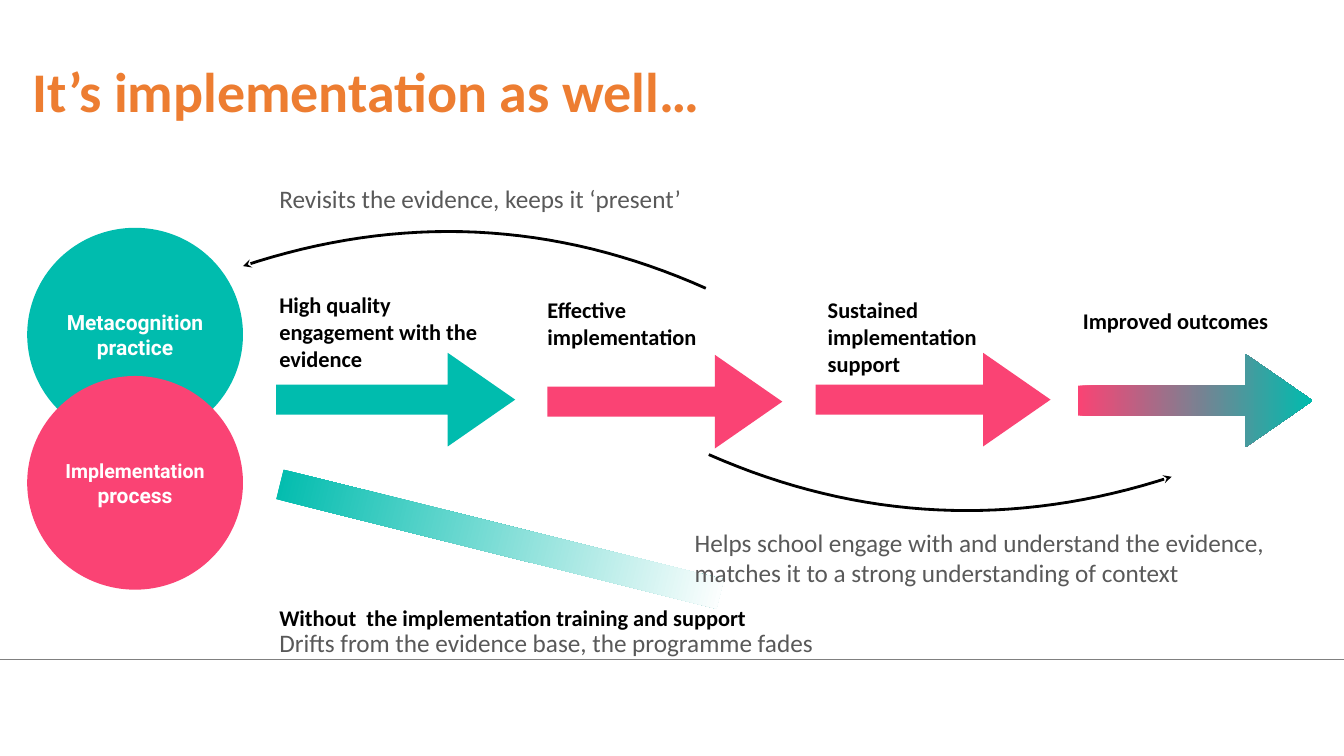
from lxml.etree import SubElement
from pptx import Presentation
from pptx.dml.color import RGBColor
from pptx.enum.shapes import MSO_CONNECTOR, MSO_SHAPE
from pptx.enum.text import MSO_ANCHOR, MSO_AUTO_SIZE, PP_ALIGN
from pptx.oxml.ns import qn
from pptx.util import Pt

EMU_PER_PX = 9144  # 100 px to the inch
COLOURS = {
    "teal": "00BCAE", "pink": "FA4374", "orange": "ED7D31", "white": "FFFFFF",
    "black": "000000", "text_grey": "595959", "rule_grey": "808080",
}


def px(*lengths):
    return [round(length * EMU_PER_PX) for length in lengths]


def colour(name):
    return RGBColor.from_string(COLOURS[name])


class SlideBuilder:
    font = "Calibri"
    circle_font = "Roboto"
    inset = 3

    def __init__(self, slide):
        self.slide = slide
        self.shapes = slide.shapes

    def style(self, run, size, ink, bold=False, font=None):
        run.font.name = font or self.font
        run.font.size = Pt(size)
        run.font.bold = bold
        run.font.color.rgb = colour(ink)

    def inset_frame(self, frame):
        margin, = px(self.inset)
        frame.margin_left = frame.margin_right = margin
        frame.margin_top = frame.margin_bottom = margin
        frame.vertical_anchor = MSO_ANCHOR.MIDDLE

    def title(self, text, box):
        heading = self.shapes.title
        heading.left, heading.top, heading.width, heading.height = px(*box)
        frame = heading.text_frame
        frame.text = text
        frame.auto_size = MSO_AUTO_SIZE.NONE
        frame.vertical_anchor = MSO_ANCHOR.TOP
        frame.paragraphs[0].alignment = PP_ALIGN.LEFT
        self.style(frame.paragraphs[0].runs[0], 40, "orange", bold=True)

    def rule(self, x1, y1, x2, y2):
        line = self.shapes.add_connector(MSO_CONNECTOR.STRAIGHT, *px(x1, y1, x2, y2))
        line.line.color.rgb = colour("rule_grey")
        line.line.width = Pt(0.5)
        SubElement(line.element.spPr, qn("a:effectLst"))

    def block(self, preset, box, *fills, rotation=0):
        """A borderless shape; two fills make a left-to-right gradient."""
        shape = self.shapes.add_shape(preset, *px(*box))
        shape.shadow.inherit = False
        shape.line.fill.background()
        shape.rotation = rotation
        if len(fills) == 1:
            shape.fill.solid()
            shape.fill.fore_color.rgb = colour(fills[0])
        else:
            shape.fill.gradient()
            shape.fill.gradient_angle = 0
            for position, (stop, name) in enumerate(zip(shape.fill.gradient_stops, fills)):
                stop.position = position
                stop.color.rgb = colour(name)
        return shape

    def arrow(self, left, top, width, *fills):
        shape = self.block(MSO_SHAPE.RIGHT_ARROW, (left, top, width, 93), *fills)
        shape.adjustments[0] = 0.32
        shape.adjustments[1] = 0.72

    def circle(self, top, fill, *sized_words):
        frame = self.block(MSO_SHAPE.OVAL, (27, top, 214, 212), fill).text_frame
        self.inset_frame(frame)
        frame.word_wrap = True
        paragraph = frame.paragraphs[0]
        paragraph.alignment = PP_ALIGN.CENTER
        for words, size in sized_words:
            run = paragraph.add_run()
            run.text = words
            self.style(run, size, "white", bold=True, font=self.circle_font)

    def text(self, text, box, size, ink, bold=False, wrap=True):
        frame = self.shapes.add_textbox(*px(*box)).text_frame
        self.inset_frame(frame)
        frame.word_wrap = wrap
        frame.auto_size = MSO_AUTO_SIZE.SHAPE_TO_FIT_TEXT
        frame.text = text
        self.style(frame.paragraphs[0].runs[0], size, ink, bold)

    def label(self, text, box, wrap=True):
        self.text(text, box, 16, "black", bold=True, wrap=wrap)

    def remark(self, text, box):
        self.text(text, box, 18, "text_grey")

    def curve(self, *controls, steps=32):
        """A cubic curve with an arrowhead at its first point."""
        points = []
        for step in range(steps + 1):
            t = step / steps
            weights = ((1 - t) ** 3, 3 * t * (1 - t) ** 2, 3 * t * t * (1 - t), t ** 3)
            points.append(px(*(sum(w * c for w, c in zip(weights, axis))
                               for axis in zip(*controls))))
        builder = self.shapes.build_freeform(*points[0])
        builder.add_line_segments(points[1:], close=False)
        bow = builder.convert_to_shape()
        bow.shadow.inherit = False
        bow.fill.background()
        bow.line.color.rgb = colour("black")
        bow.line.width = Pt(2)
        SubElement(bow.element.spPr.find(qn("a:ln")), qn("a:headEnd"), type="stealth")


def main():
    deck = Presentation()
    deck.slide_width, deck.slide_height = px(1333, 750)
    page = SlideBuilder(deck.slides.add_slide(deck.slide_layouts[5]))

    # Title and footer rule
    page.title("It’s implementation as well…", (22, 51, 1192, 81))
    page.rule(0, 654, 1333, 654)

    # Fading strip and the two overlapping circles
    page.block(MSO_SHAPE.RECTANGLE, (271, 520, 450, 30), "teal", "white", rotation=14)
    page.circle(226, "teal", ("Metacognition practice", 15))
    page.circle(373, "pink", ("Implementation", 14), (" process", 15))

    # Chain of arrows
    page.arrow(274, 350, 237, "teal")
    page.arrow(543, 352, 233, "pink")
    page.arrow(809, 350, 233, "pink")
    page.arrow(1069, 351, 233, "pink", "teal")

    # Arrow labels
    page.label("High quality engagement with the evidence", (274, 286, 232, 86))
    page.label("Effective implementation", (540, 291, 179, 59))
    page.label("Sustained implementation support", (818, 291, 214, 86))
    page.label("Improved outcomes", (1071, 302, 192, 33), wrap=False)
    page.label("Without  the implementation training and support",
               (274, 596, 474, 33), wrap=False)

    # Feedback curves and remarks
    page.curve((241, 264), (397, 212), (550, 219), (700, 286))
    page.curve((1162, 473), (1006, 524), (853, 517), (703, 451))
    page.remark("Revisits the evidence, keeps it ‘present’", (274, 179, 408, 36))
    page.remark("Drifts from the evidence base, the programme fades", (274, 619, 571, 36))
    page.remark("Helps school engage with and understand the evidence, "
                "matches it to a strong understanding of context", (686, 520, 577, 66))

    deck.save("out.pptx")


if __name__ == "__main__":
    main()
